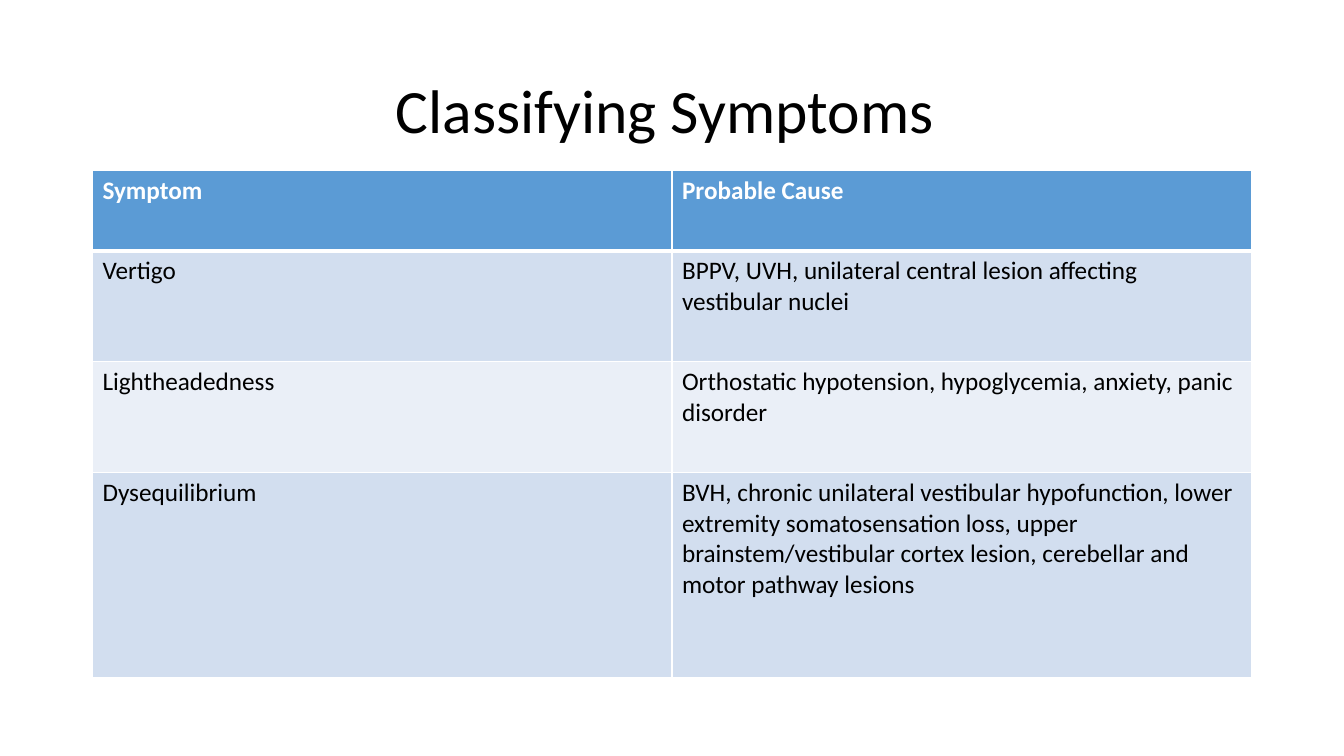
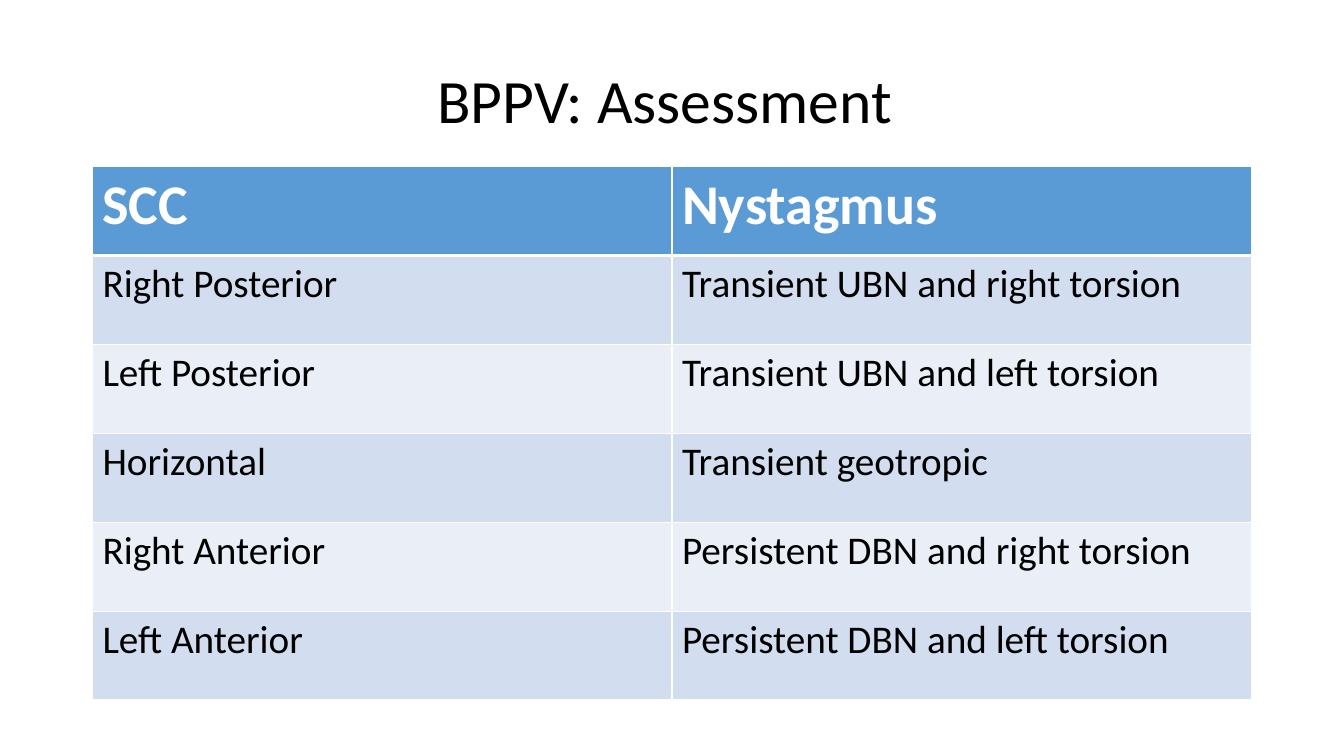
from dataclasses import dataclass

from lxml import etree
from pptx import Presentation
from pptx import util as u
from pptx.dml.color import RGBColor
from pptx.enum import text
from pptx.oxml.ns import qn

# Shared look
FONT = "Calibri"
WHITE = RGBColor(0xFF, 0xFF, 0xFF)
BLACK = RGBColor(0x00, 0x00, 0x00)
HEADER_BLUE = RGBColor(0x5B, 0x9B, 0xD5)
BANDS = (RGBColor(0xD2, 0xDE, 0xEF), RGBColor(0xEA, 0xEF, 0xF7))

LEFT, WIDTH = u.Cm(2.33), u.Cm(29.21)
TITLE_HEIGHT = u.Cm(3.68)
TITLE_SIZE = 44
THIN, THICK = 1, 3


@dataclass
class TableSlide:
    title: str
    title_top: float
    table_top: float
    row_heights: list[float]
    header_size: int
    body_size: int
    rows: list[tuple[str, str]]


SLIDES = [
    TableSlide(
        title="Classifying Symptoms ",
        title_top=1.02,
        table_top=4.3,
        row_heights=[2.02, 2.79, 2.79, 5.17],
        header_size=18,
        body_size=18,
        rows=[
            ("Symptom", "Probable Cause"),
            ("Vertigo", "BPPV, UVH, unilateral central lesion affecting vestibular nuclei"),
            ("Lightheadedness", "Orthostatic hypotension, hypoglycemia, anxiety, panic disorder"),
            (
                "Dysequilibrium",
                "BVH, chronic unilateral vestibular hypofunction, lower extremity "
                "somatosensation loss, upper brainstem/vestibular cortex lesion, "
                "cerebellar and motor pathway lesions",
            ),
        ],
    ),
    TableSlide(
        title="BPPV: Assessment ",
        title_top=0.76,
        table_top=4.2,
        row_heights=[2.24] * 6,
        header_size=40,
        body_size=28,
        rows=[
            ("SCC", "Nystagmus"),
            ("Right Posterior", "Transient UBN and right torsion"),
            ("Left Posterior", "Transient UBN and left torsion"),
            ("Horizontal", "Transient geotropic"),
            ("Right Anterior", "Persistent DBN and right torsion"),
            ("Left Anterior", "Persistent DBN and left torsion"),
        ],
    ),
]


def add_run(paragraph, wording: str, size: int, color: RGBColor, bold: bool = False) -> None:
    run = paragraph.add_run()
    run.text = wording
    run.font.name = FONT
    run.font.size = u.Pt(size)
    run.font.bold = bold
    run.font.color.rgb = color


def add_title(slide, wording: str, top: float) -> None:
    shape = slide.shapes.add_textbox(LEFT, u.Cm(top), WIDTH, TITLE_HEIGHT)
    frame = shape.text_frame
    frame.word_wrap = True
    frame.vertical_anchor = text.MSO_ANCHOR.MIDDLE
    paragraph = frame.paragraphs[0]
    paragraph.alignment = text.PP_ALIGN.CENTER
    paragraph.line_spacing = 0.9
    add_run(paragraph, wording, TITLE_SIZE, BLACK)


def set_borders(cell, top: int, bottom: int) -> None:
    """White cell borders; they must come before the fill in the cell properties."""
    properties = cell._tc.get_or_add_tcPr()
    widths = {"a:lnL": THIN, "a:lnR": THIN, "a:lnT": top, "a:lnB": bottom}
    for position, (tag, width) in enumerate(widths.items()):
        line = etree.Element(qn(tag), w=str(u.Pt(width)))
        fill = etree.SubElement(line, qn("a:solidFill"))
        etree.SubElement(fill, qn("a:srgbClr"), val=str(WHITE))
        properties.insert(position, line)


def add_table(slide, content: TableSlide) -> None:
    row_count, column_count = len(content.rows), len(content.rows[0])
    height = u.Cm(sum(content.row_heights))
    table = slide.shapes.add_table(
        row_count, column_count, LEFT, u.Cm(content.table_top), WIDTH, height
    ).table
    for row_index, wordings in enumerate(content.rows):
        table.rows[row_index].height = u.Cm(content.row_heights[row_index])
        header = row_index == 0
        size = content.header_size if header else content.body_size
        for column_index, wording in enumerate(wordings):
            cell = table.cell(row_index, column_index)
            cell.fill.solid()
            cell.fill.fore_color.rgb = HEADER_BLUE if header else BANDS[(row_index - 1) % 2]
            set_borders(
                cell,
                top=THICK if row_index == 1 else THIN,
                bottom=THICK if header else THIN,
            )
            color = WHITE if header else BLACK
            add_run(cell.text_frame.paragraphs[0], wording, size, color, bold=header)


def main() -> None:
    presentation = Presentation()
    presentation.slide_width, presentation.slide_height = u.Cm(33.87), u.Cm(19.05)
    blank_layout = presentation.slide_layouts[6]
    for content in SLIDES:
        slide = presentation.slides.add_slide(blank_layout)
        add_title(slide, content.title, content.title_top)
        add_table(slide, content)
    presentation.save("out.pptx")


if __name__ == "__main__":
    main()
